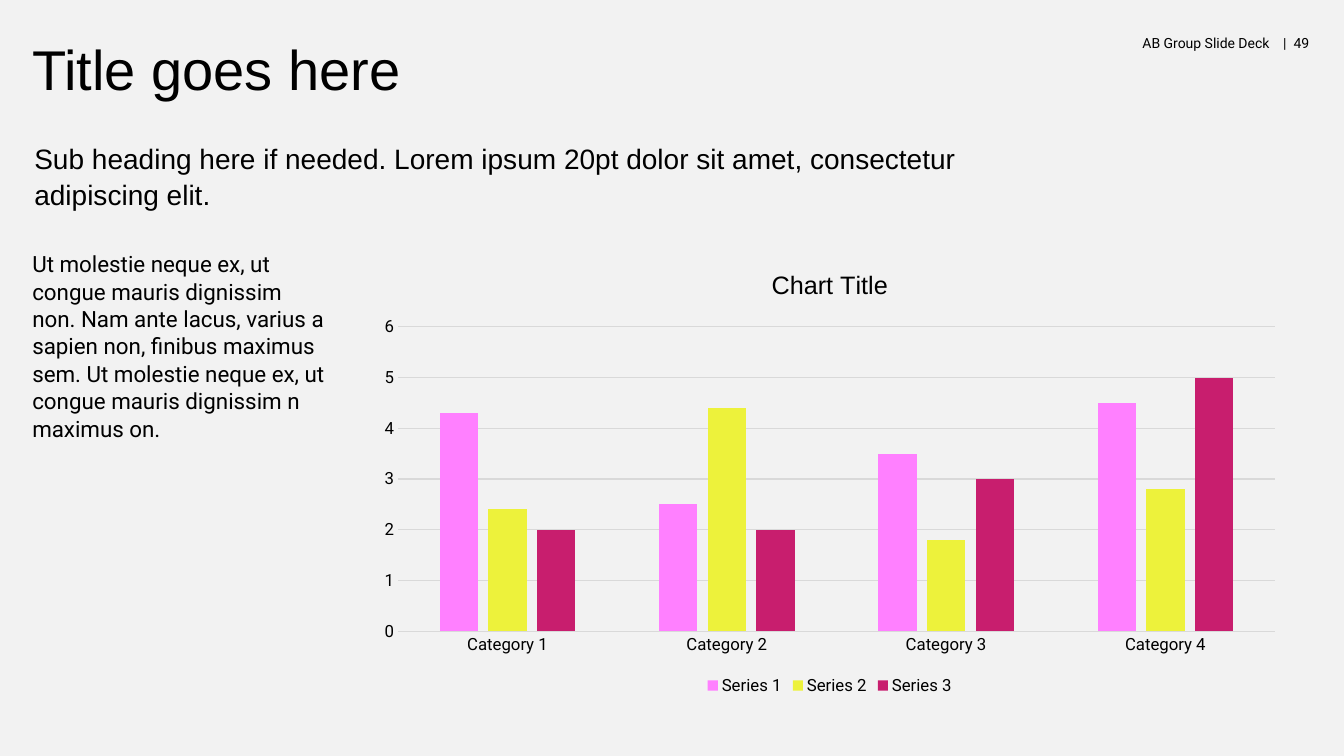
import pptx
import pptx.chart.data
import pptx.dml.color
import pptx.enum.chart
import pptx.enum.text
import pptx.util

PX = 9144
BACKGROUND = pptx.dml.color.RGBColor(0xF2, 0xF2, 0xF2)
BLACK = pptx.dml.color.RGBColor(0, 0, 0)
GRID_GREY = pptx.dml.color.RGBColor(0xD9, 0xD9, 0xD9)
PINK = pptx.dml.color.RGBColor(0xFF, 0x80, 0xFF)
YELLOW = pptx.dml.color.RGBColor(0xED, 0xF2, 0x3B)
CRIMSON = pptx.dml.color.RGBColor(0xC8, 0x1E, 0x6E)

LEFT = pptx.enum.text.PP_ALIGN.LEFT
RIGHT = pptx.enum.text.PP_ALIGN.RIGHT
CATEGORIES = ["Category 1", "Category 2", "Category 3", "Category 4"]
SERIES = [
    ("Series 1", (4.3, 2.5, 3.5, 4.5), PINK),
    ("Series 2", (2.4, 4.4, 1.8, 2.8), YELLOW),
    ("Series 3", (2, 2, 3, 5), CRIMSON),
]


def apply(target, formats):
    """Set each named format value on the target."""
    for name, value in formats.items():
        setattr(target, name, value)


def style_font(font, face, size):
    """Give a font its face, size and black colour."""
    apply(font, {"name": face, "size": pptx.util.Pt(size), "bold": False})
    font.color.rgb = BLACK


def style_line(line):
    """Draw a line in thin grid grey."""
    line.color.rgb = GRID_GREY
    line.width = pptx.util.Pt(0.75)


def add_copy(slide, box, copy, face, size, spacing=1.0, align=LEFT):
    """Place a wrapped paragraph without margins in the box."""
    frame = slide.shapes.add_textbox(*(PX * side for side in box)).text_frame
    apply(frame, {"word_wrap": True, "margin_left": 0, "margin_right": 0,
                  "margin_top": 0, "margin_bottom": 0})
    paragraph = frame.paragraphs[0]
    apply(paragraph, {"text": copy, "line_spacing": spacing, "alignment": align})
    style_font(paragraph.runs[0].font, face, size)


def add_page_marker(slide, box):
    """Place the deck name, divider and page number along the box."""
    left, top, width, height = box
    number_left = left + width - 40
    divider_left = number_left - 27
    deck_width = divider_left - left + 3
    add_copy(slide, (left, top, deck_width, height), "AB Group Slide Deck",
             "Roboto", 10, align=RIGHT)
    add_copy(slide, (divider_left, top, 20, height), "|", "Roboto", 10, align=RIGHT)
    add_copy(slide, (number_left, top, 40, height), "49", "Roboto", 10)


def add_series_chart(slide, box):
    """Place the clustered column chart in the box."""
    figures = pptx.chart.data.CategoryChartData()
    figures.categories = CATEGORIES
    for name, values, _ in SERIES:
        figures.add_series(name, values)
    chart = slide.shapes.add_chart(
        pptx.enum.chart.XL_CHART_TYPE.COLUMN_CLUSTERED,
        *(PX * side for side in box), figures).chart
    style_font(chart.font, "Roboto", 10)

    heading = chart.chart_title
    heading.include_text_in_layout = False
    heading.text_frame.text = "Chart Title"
    style_font(heading.text_frame.paragraphs[0].runs[0].font, "Arial", 18)

    chart.has_legend = True
    apply(chart.legend, {"position": pptx.enum.chart.XL_LEGEND_POSITION.BOTTOM,
                         "include_in_layout": False})
    style_font(chart.legend.font, "Roboto", 12)

    for axis in (chart.category_axis, chart.value_axis):
        apply(axis, {"major_tick_mark": pptx.enum.chart.XL_TICK_MARK.NONE,
                     "minor_tick_mark": pptx.enum.chart.XL_TICK_MARK.NONE})
        style_font(axis.tick_labels.font, "Roboto", 12)
    style_line(chart.category_axis.format.line)
    apply(chart.value_axis, {"minimum_scale": 0, "maximum_scale": 6,
                             "major_unit": 1, "has_major_gridlines": True})
    style_line(chart.value_axis.major_gridlines.format.line)
    chart.value_axis.format.line.fill.background()

    columns = chart.plots[0]
    apply(columns, {"gap_width": 219, "overlap": -27, "vary_by_categories": False})
    for column, (_, _, colour) in zip(columns.series, SERIES):
        column.format.fill.solid()
        column.format.fill.fore_color.rgb = colour


def add_chart_slide(deck, box):
    """Add the slide with a title, side text and chart in the box."""
    slide = deck.slides.add_slide(deck.slide_layouts[6])
    slide.background.fill.solid()
    slide.background.fill.fore_color.rgb = BACKGROUND
    left, top, width, height = box
    content_top = top + 214
    content_height = height - 214
    add_copy(slide, (left, top, 900, 105), "Title goes here", "Arial", 40)
    add_copy(slide, (left + 2, top + 105, 948, 90),
             "Sub heading here if needed. Lorem ipsum 20pt dolor sit amet, "
             "consectetur adipiscing elit.", "Arial", 20, 1.05)
    add_copy(slide, (left, content_top, 292, content_height),
             "Ut molestie neque ex, ut congue mauris dignissim non. Nam ante "
             "lacus, varius a sapien non, finibus maximus sem. Ut molestie neque "
             "ex, ut congue mauris dignissim n maximus on.", "Roboto", 16, 1.02)
    add_page_marker(slide, (left + 950, top, width - 910, 22))
    add_series_chart(slide, (left + 331, content_top, width - 331, content_height))


def main():
    """Build and save the deck."""
    deck = pptx.Presentation()
    apply(deck, {"slide_width": 1333 * PX, "slide_height": 750 * PX})
    add_chart_slide(deck, (32, 34, 1251, 660))
    deck.save("out.pptx")


if __name__ == "__main__":
    main()
